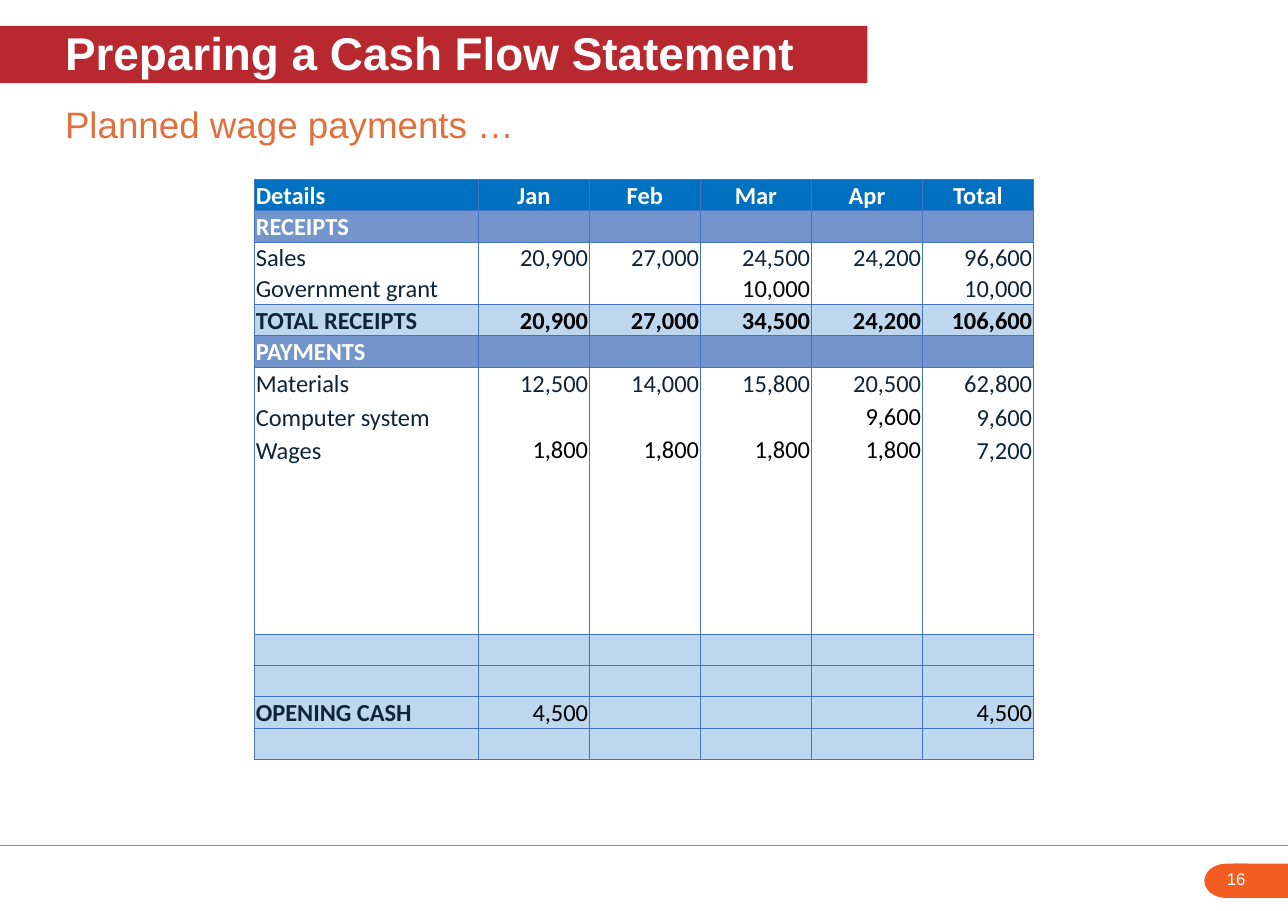
"""Build the cash flow statement slide on planned wage payments."""
from lxml.etree import SubElement
from pptx import Presentation
from pptx.dml.color import RGBColor
from pptx.enum.shapes import MSO_CONNECTOR, MSO_SHAPE
from pptx.enum.text import MSO_ANCHOR, PP_ALIGN
from pptx.oxml import parse_xml
from pptx.oxml.ns import nsdecls, qn
from pptx.util import Cm, Pt

WHITE = RGBColor(0xFF, 0xFF, 0xFF)
BLACK = RGBColor(0x00, 0x00, 0x00)
NAVY = RGBColor(0x0F, 0x25, 0x37)
RED = RGBColor(0xB8, 0x29, 0x2F)
RUST = RGBColor(0xDF, 0x71, 0x3E)
ORANGE = RGBColor(0xF2, 0x5E, 0x22)
BLUE = RGBColor(0x00, 0x70, 0xC0)
STEEL = RGBColor(0x73, 0x95, 0xCB)
PALE = RGBColor(0xBD, 0xD7, 0xEE)
BORDER = RGBColor(0x44, 0x72, 0xC4)

TITLE = "Preparing a Cash Flow Statement"
SUBTITLE = "Planned wage payments …"
PAGE_NUMBER = "16"

BLANK = ("",) * 6
ROWS = [
    ("header", ("Details", "Jan", "Feb", "Mar", "Apr", "Total")),
    ("section", ("RECEIPTS", "", "", "", "", "")),
    ("receipt", ("Sales", "20,900", "27,000", "24,500", "24,200", "96,600")),
    ("planned receipt", ("Government grant", "", "", "10,000", "", "10,000")),
    ("total", ("TOTAL RECEIPTS", "20,900", "27,000", "34,500", "24,200", "106,600")),
    ("section", ("PAYMENTS", "", "", "", "", "")),
    ("payment", ("Materials", "12,500", "14,000", "15,800", "20,500", "62,800")),
    ("planned payment", ("Computer system", "", "", "", "9,600", "9,600")),
    ("planned payment", ("Wages", "1,800", "1,800", "1,800", "1,800", "7,200")),
    *[("payment", BLANK)] * 5,
    *[("balance", BLANK)] * 2,
    ("balance", ("OPENING CASH", "4,500", "", "", "", "4,500")),
    ("balance", BLANK),
]
FILLS = {"header": BLUE, "section": STEEL, "total": PALE, "balance": PALE}
COLUMN_WIDTHS = [5.16] + [2.56] * 5
ROW_HEIGHT, PAYMENT_HEIGHT = 0.72, 0.77
TABLE_LEFT, TABLE_TOP = 5.87, 4.14
PAGE_WIDTH, PAGE_HEIGHT = 29.7, 21


def write(frame, text, size=16, color=NAVY, bold=False, font="Calibri",
          align=PP_ALIGN.LEFT, anchor=MSO_ANCHOR.MIDDLE):
    para = frame.paragraphs[0]
    para.alignment = align
    frame.vertical_anchor = anchor
    span = para.add_run()
    span.text = text
    span.font.size = Pt(size)
    span.font.name = font
    span.font.bold = bold
    span.font.color.rgb = color


def add_block(page, kind, left, top, width, height, color):
    block = page.shapes.add_shape(kind, Cm(left), Cm(top), Cm(width), Cm(height))
    block.shadow.inherit = False
    block.fill.solid()
    block.fill.fore_color.rgb = color
    block.line.fill.background()
    return block


def set_heading_margins(frame):
    frame.word_wrap = True
    frame.margin_left = Cm(1.5)
    frame.margin_right = frame.margin_top = 0
    frame.margin_bottom = Cm(0.13)


def cell_format(kind, column):
    """Return the text format of a cell from its row kind and column."""
    if kind == "header":
        align = PP_ALIGN.CENTER if column else PP_ALIGN.LEFT
        return dict(color=WHITE, bold=True, align=align)
    if column == 0:
        color = WHITE if kind == "section" else NAVY
        return dict(color=color, bold=kind in ("section", "total", "balance"))
    entered = kind in ("total", "balance") or ("planned" in kind and column < 5)
    if entered:
        return dict(color=BLACK, bold=kind == "total", align=PP_ALIGN.RIGHT,
                    anchor=MSO_ANCHOR.TOP)
    return dict(align=PP_ALIGN.RIGHT)


def set_borders(cell, top, bottom):
    edges = [("lnL", True), ("lnR", True), ("lnT", top), ("lnB", bottom)]
    for place, (tag, visible) in enumerate(edges):
        paint = (f'<a:solidFill><a:srgbClr val="{BORDER}"/></a:solidFill>'
                 if visible else "<a:noFill/>")
        edge = parse_xml(f'<a:{tag} {nsdecls("a")} w="6350">{paint}</a:{tag}>')
        cell._tc.get_or_add_tcPr().insert(place, edge)


def add_statement(page):
    fills = [FILLS.get(kind, WHITE) for kind, _ in ROWS]
    heights = [PAYMENT_HEIGHT if "payment" in kind else ROW_HEIGHT for kind, _ in ROWS]
    ruled = [True] + [not upper == lower == WHITE
                      for upper, lower in zip(fills, fills[1:])] + [True]
    table = page.shapes.add_table(
        len(ROWS), len(COLUMN_WIDTHS), Cm(TABLE_LEFT), Cm(TABLE_TOP),
        Cm(sum(COLUMN_WIDTHS)), Cm(sum(heights))).table
    table.first_row = table.horz_banding = False
    for column, width in zip(table.columns, COLUMN_WIDTHS):
        column.width = Cm(width)
    for index, (kind, texts) in enumerate(ROWS):
        table.rows[index].height = Cm(heights[index])
        for column, text in enumerate(texts):
            cell = table.cell(index, column)
            cell.margin_left = cell.margin_right = cell.margin_top = Cm(0.03)
            cell.margin_bottom = 0
            cell.fill.solid()
            cell.fill.fore_color.rgb = fills[index]
            set_borders(cell, ruled[index], ruled[index + 1])
            if text:
                style = cell_format(kind, column)
                cell.vertical_anchor = style.pop("anchor", MSO_ANCHOR.MIDDLE)
                write(cell.text_frame, text, anchor=None, **style)
            else:
                para = cell.text_frame.paragraphs[0]
                SubElement(para._p, qn("a:endParaRPr"), sz="1600")


def add_footer(page):
    rule = page.shapes.add_connector(
        MSO_CONNECTOR.STRAIGHT, 0, Cm(19.5), Cm(PAGE_WIDTH), Cm(19.5))
    rule.line.color.rgb = RUST
    rule.line.width = Pt(0.75)
    SubElement(rule._element.spPr, qn("a:effectLst"))
    cap = add_block(page, MSO_SHAPE.FLOWCHART_DELAY, 27.77, 19.91, 1, 0.79, ORANGE)
    cap.rotation = 180
    add_block(page, MSO_SHAPE.RECTANGLE, 28.46, 19.91, 1.24, 0.79, ORANGE)
    box = page.shapes.add_textbox(Cm(28.04), Cm(19.91), Cm(1.42), Cm(0.72))
    box.text_frame.word_wrap = True
    write(box.text_frame, PAGE_NUMBER, size=11, color=WHITE, font="Arial",
          anchor=MSO_ANCHOR.TOP)


def main():
    deck = Presentation()
    deck.slide_width, deck.slide_height = Cm(PAGE_WIDTH), Cm(PAGE_HEIGHT)
    page = deck.slides.add_slide(deck.slide_layouts[6])
    add_footer(page)
    banner = add_block(page, MSO_SHAPE.RECTANGLE, 0, 0.6, 20, 1.32, RED)
    set_heading_margins(banner.text_frame)
    write(banner.text_frame, TITLE, size=30, color=WHITE, bold=True, font="Arial")
    box = page.shapes.add_textbox(0, Cm(2.26), Cm(PAGE_WIDTH), Cm(1.3))
    set_heading_margins(box.text_frame)
    write(box.text_frame, SUBTITLE, size=24, color=RUST, font="Arial")
    add_statement(page)
    deck.save("out.pptx")


if __name__ == "__main__":
    main()
